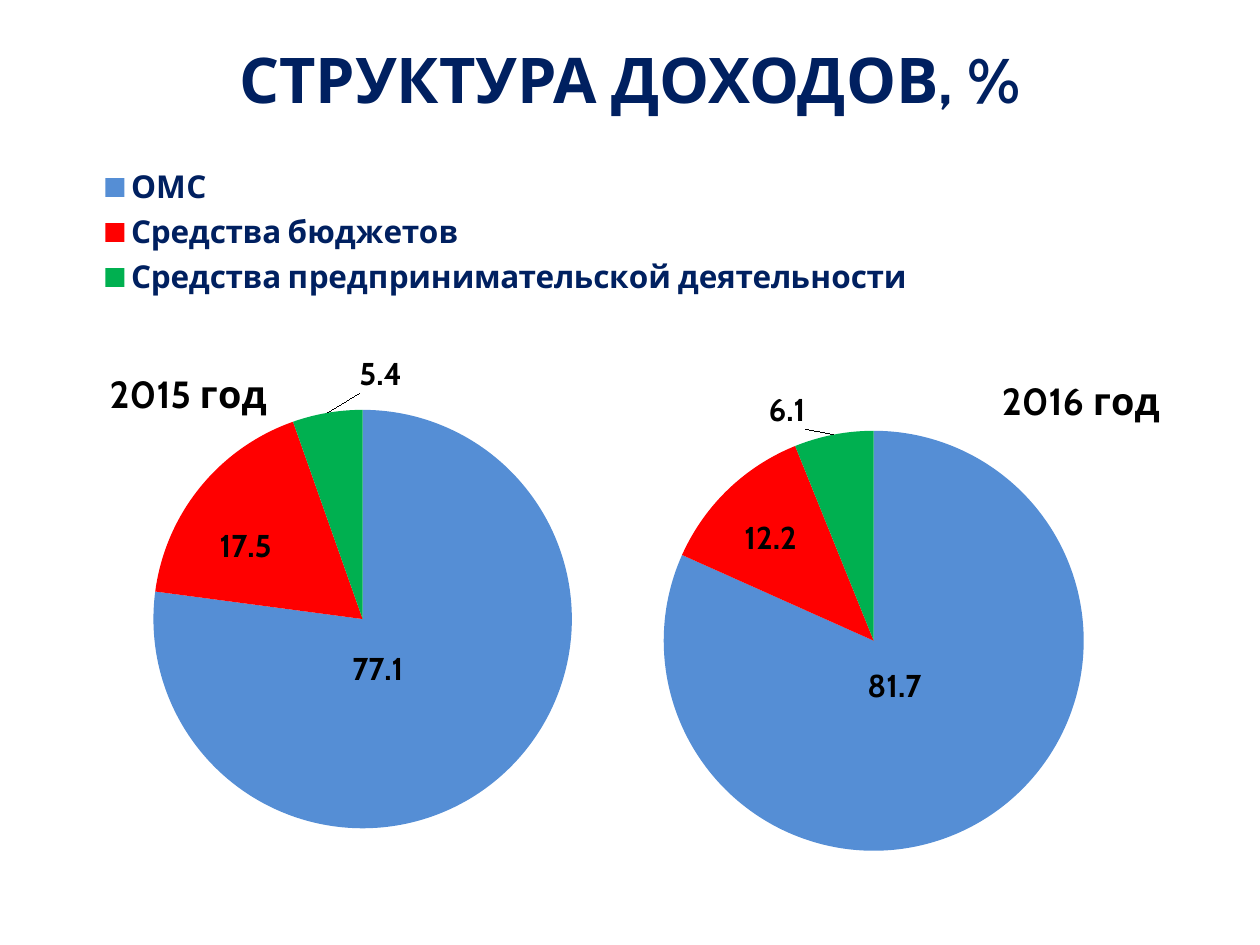
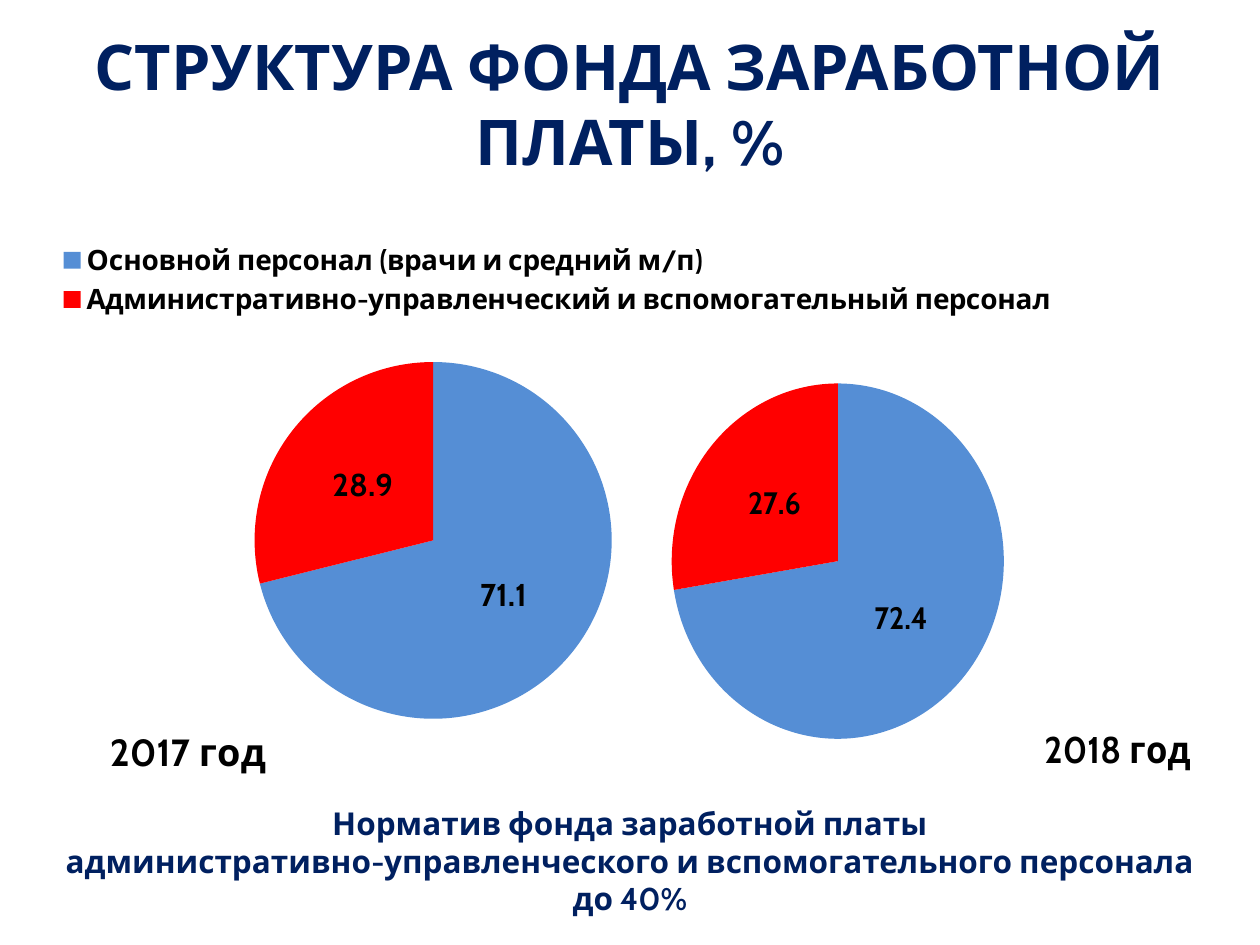
from dataclasses import dataclass, field
from typing import Optional

from lxml import etree
from pptx import Presentation
from pptx.chart.data import CategoryChartData
from pptx.dml.color import RGBColor
from pptx.enum.chart import XL_CHART_TYPE, XL_LABEL_POSITION, XL_LEGEND_POSITION
from pptx.enum.text import MSO_ANCHOR, MSO_AUTO_SIZE, PP_ALIGN
from pptx.oxml.ns import qn
from pptx.util import Inches, Pt

NAVY = RGBColor(0x00, 0x20, 0x60)
BLACK = RGBColor(0x00, 0x00, 0x00)
BLUE = RGBColor(0x55, 0x8E, 0xD5)
RED = RGBColor(0xFF, 0x00, 0x00)
GREEN = RGBColor(0x00, 0xB0, 0x50)
SLICE_COLORS = (BLUE, RED, GREEN)
FONT = "Cabin"
CHART_FONT = "Calibri"
SLIDE_W = 10


@dataclass
class Legend:
    position: XL_LEGEND_POSITION
    box: tuple
    size: float
    color: RGBColor


@dataclass
class Pie:
    """Boxes and offsets inside the chart are fractions of its size."""
    year: str
    box: tuple
    values: tuple
    title_at: tuple
    plot: tuple
    categories: tuple = ()
    legend: Optional[Legend] = None
    label_shifts: tuple = ()


@dataclass
class PieSlide:
    title: str
    title_height: float
    pies: tuple
    footer: tuple = field(default=())


SLIDES = (
    PieSlide("СТРУКТУРА ДОХОДОВ, %", 0.64, (
        Pie("2015 год", (0.39, 1.17, 7.11, 5.63), (77.1, 17.5, 5.4),
            title_at=(0.06, 0.3), plot=(0.07, 0.37, 0.56, 0.59),
            categories=("ОМС", "Средства бюджетов",
                        "Средства предпринимательской деятельности"),
            legend=Legend(XL_LEGEND_POSITION.RIGHT, (0.04, 0.02, 0.94, 0.2), 18, NAVY),
            label_shifts=((-0.06, -0.04), (-0.04, -0.01), (0.04, -0.2))),
        Pie("2016 год", (4.53, 2.66, 4.81, 4.22), (81.7, 12.2, 6.1),
            title_at=(0.7, 0.06), plot=(0.15, 0.18, 0.7, 0.79),
            label_shifts=((-0.06, -0.08), (-0.05, -0.05), (-0.11, -0.24))),
    )),
    PieSlide("СТРУКТУРА ФОНДА ЗАРАБОТНОЙ ПЛАТЫ, %", 1.03, (
        Pie("2017 год", (0.5, 1.75, 7.94, 4.5), (71.1, 28.9),
            title_at=(0.04, 0.88), plot=(0.16, 0.25, 0.42, 0.63),
            categories=("Основной персонал (врачи и средний м/п)",
                        "Административно-управленческий и вспомогательный персонал"),
            legend=Legend(XL_LEGEND_POSITION.TOP, (0, 0.03, 0.99, 0.15), 16, BLACK)),
        Pie("2018 год", (4.61, 2.58, 4.89, 3.64), (72.4, 27.6),
            title_at=(0.81, 0.87), plot=(0.16, 0.13, 0.59, 0.79)),
    ), footer=("Норматив фонда заработной платы",
               "административно-управленческого и вспомогательного персонала",
               "до 40%")),
)


def style_font(font, size: float, color: RGBColor) -> None:
    font.name, font.size, font.bold = FONT, Pt(size), True
    font.color.rgb = color


def set_layout(parent, place: tuple, inner: bool = False) -> None:
    """Give a chart part a manual place: x, y and, if present, width and height."""
    for old in parent.findall(qn("c:layout")):
        parent.remove(old)
    layout = etree.Element(qn("c:layout"))
    manual = etree.SubElement(layout, qn("c:manualLayout"))
    settings = [("layoutTarget", "inner")] if inner else []
    if parent.tag != qn("c:dLbl"):
        settings += [("xMode", "edge"), ("yMode", "edge")]
    settings += zip("xywh", place)
    for name, value in settings:
        etree.SubElement(manual, qn(f"c:{name}")).set("val", str(value))
    leading = {qn("c:tx"), qn("c:legendPos"), qn("c:idx")}
    parent.insert(sum(child.tag in leading for child in parent), layout)


def add_pie(s, pie: Pie) -> None:
    data = CategoryChartData(number_format="0.0")
    data.categories = pie.categories or [str(i + 1) for i in range(len(pie.values))]
    data.add_series(pie.year, pie.values)
    chart = s.shapes.add_chart(
        XL_CHART_TYPE.PIE, *(Inches(v) for v in pie.box), data).chart
    chart.font.name, chart.font.size = CHART_FONT, Pt(18)
    chart.font.color.rgb = BLACK

    chart.has_title = True
    tf = chart.chart_title.text_frame
    tf.text = pie.year
    style_font(tf.paragraphs[0].runs[0].font, 21.6, BLACK)
    set_layout(chart.element.find(".//" + qn("c:title")), pie.title_at)
    set_layout(chart.element.find(".//" + qn("c:plotArea")), pie.plot, inner=True)

    chart.has_legend = pie.legend is not None
    if pie.legend:
        chart.legend.position = pie.legend.position
        chart.legend.include_in_layout = False
        style_font(chart.legend.font, pie.legend.size, pie.legend.color)
        set_layout(chart.element.find(".//" + qn("c:legend")), pie.legend.box)

    chart.plots[0].vary_by_categories = True
    series = chart.plots[0].series[0]
    labels = series.data_labels
    labels.show_value = True
    labels.position = XL_LABEL_POSITION.CENTER
    style_font(labels.font, 18, BLACK)
    for i, color in enumerate(SLICE_COLORS[:len(pie.values)]):
        fill = series.points[i].format.fill
        fill.solid()
        fill.fore_color.rgb = color
    for i in range(len(pie.label_shifts)):
        label = series.points[i].data_label
        style_font(label.font, 18, BLACK)
        label.position = XL_LABEL_POSITION.CENTER
    for element, shift in zip(chart.element.iter(qn("c:dLbl")), pie.label_shifts):
        set_layout(element, shift)


def style_text(tf, size: float) -> None:
    tf.word_wrap = True
    for p in tf.paragraphs:
        p.alignment = PP_ALIGN.CENTER
        for r in p.runs:
            style_font(r.font, size, NAVY)


def add_title(s, text: str, height: float) -> None:
    sp = s.shapes.title
    sp.left, sp.top = Inches(0), Inches(0.3)
    sp.width, sp.height = Inches(SLIDE_W), Inches(height)
    tf = sp.text_frame
    tf.text = text
    tf.auto_size = MSO_AUTO_SIZE.NONE
    tf.vertical_anchor = MSO_ANCHOR.MIDDLE
    style_text(tf, 36)


def add_footer(s, lines: tuple) -> None:
    sp = s.shapes.add_textbox(Inches(0), Inches(6.33), Inches(SLIDE_W), Inches(1.01))
    sp.text_frame.text = "\n".join(lines)
    style_text(sp.text_frame, 18)


def main() -> None:
    prs = Presentation()
    prs.slide_width, prs.slide_height = Inches(SLIDE_W), Inches(7.5)
    for content in SLIDES:
        s = prs.slides.add_slide(prs.slide_layouts[5])
        add_title(s, content.title, content.title_height)
        for pie in content.pies:
            add_pie(s, pie)
        if content.footer:
            add_footer(s, content.footer)
    prs.save("out.pptx")


if __name__ == "__main__":
    main()
